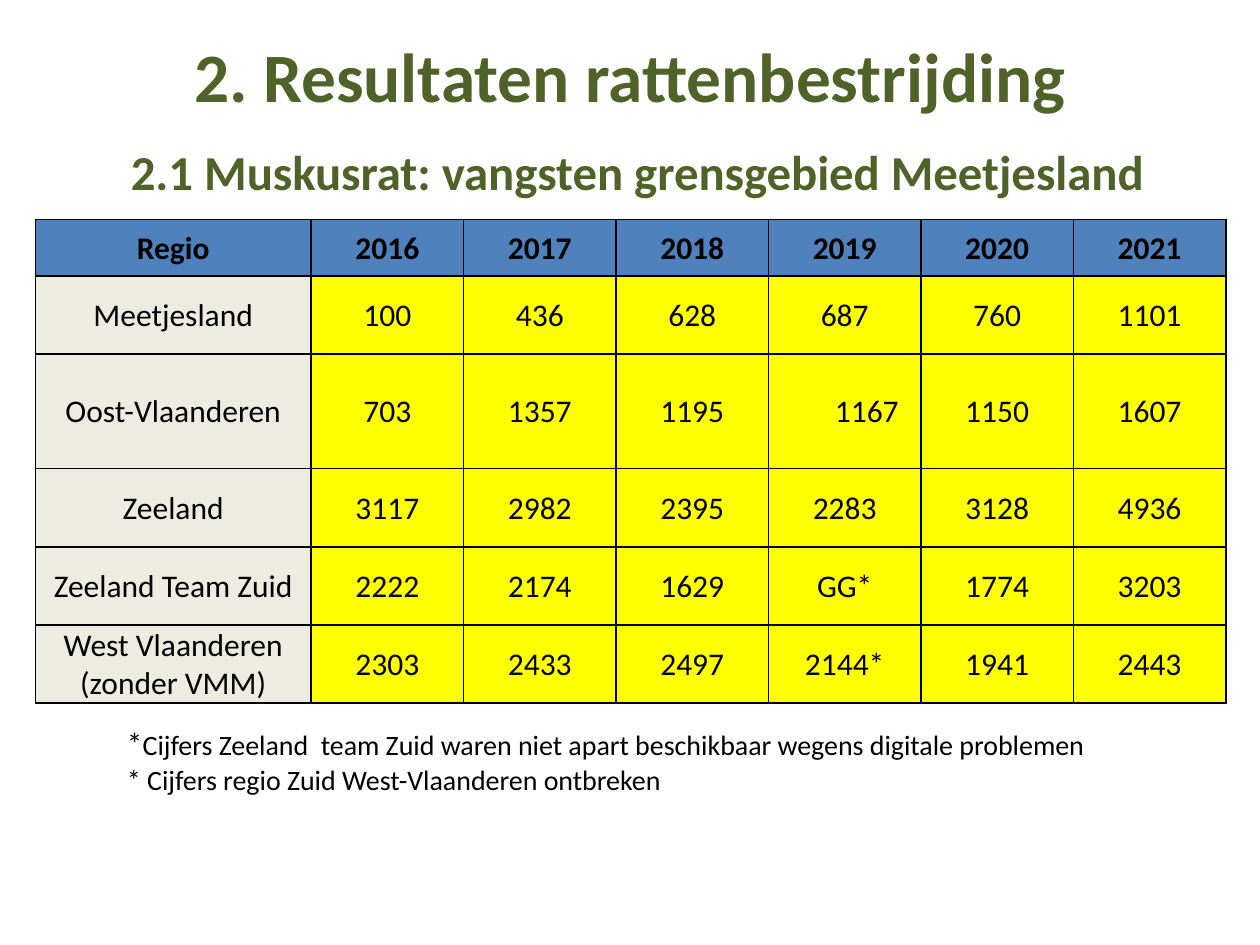
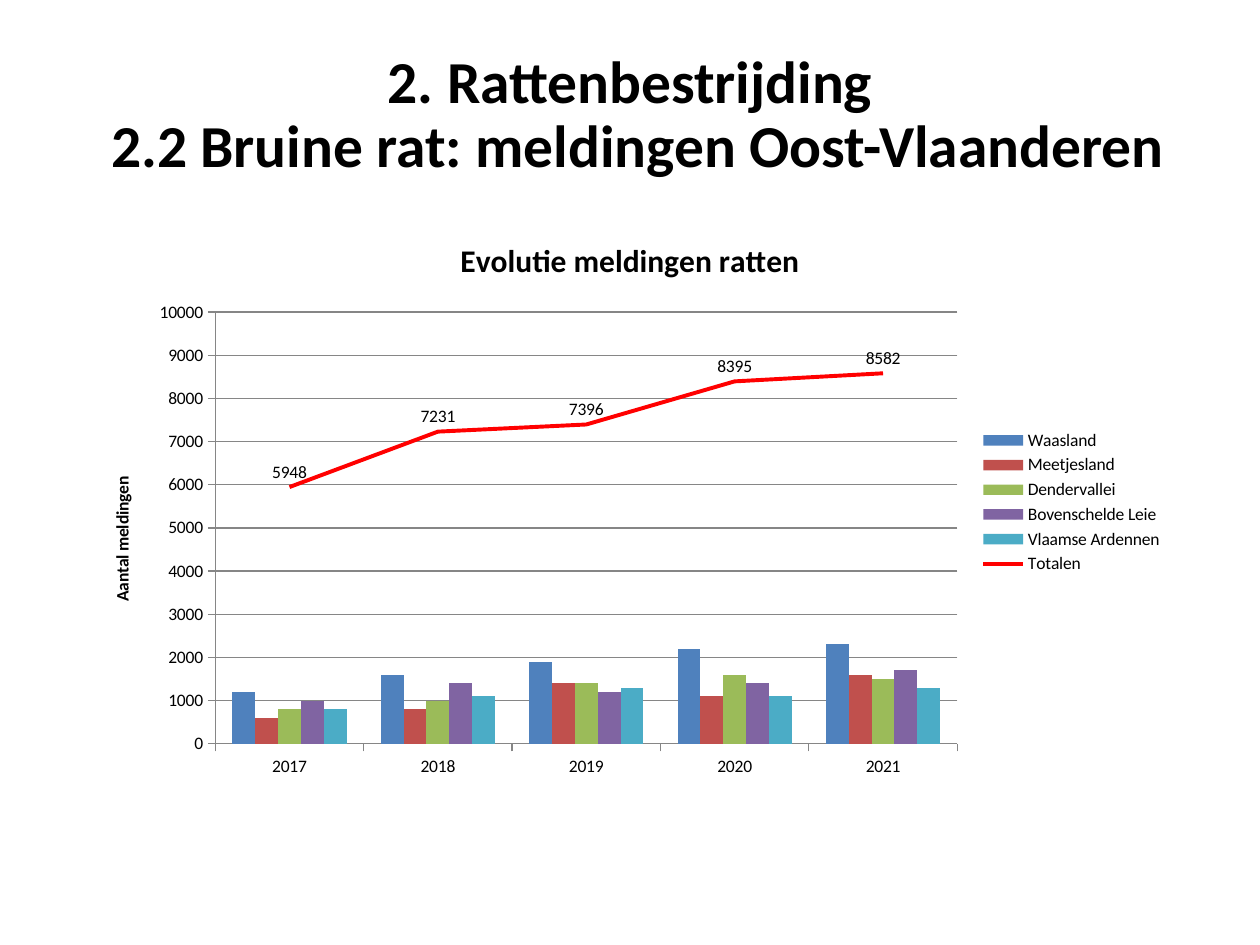
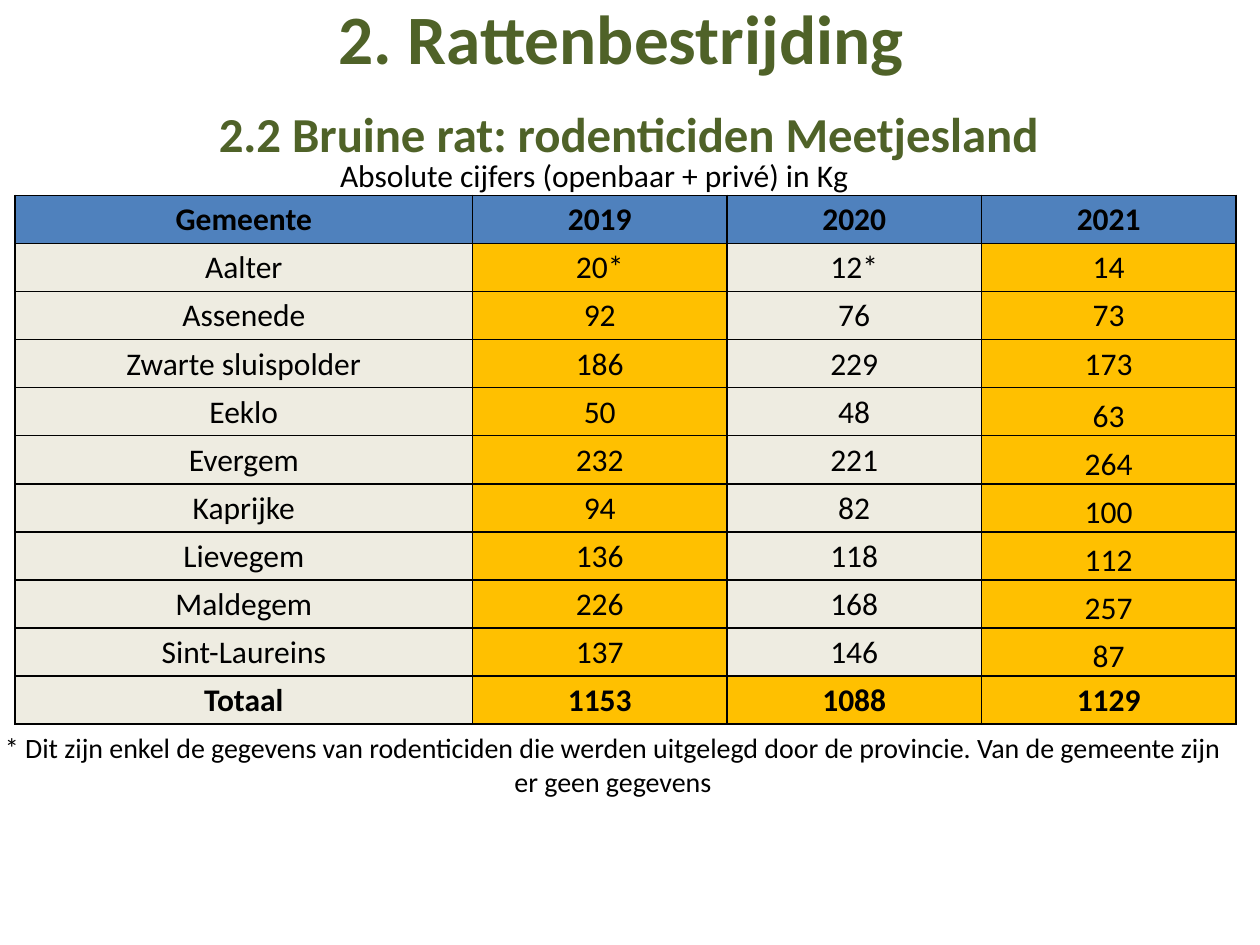
from lxml import etree
from pptx import Presentation
from pptx.chart.data import CategoryChartData
from pptx.dml.color import RGBColor
from pptx.enum.chart import XL_CHART_TYPE as ChartType
from pptx.enum.chart import XL_LABEL_POSITION as LabelPosition
from pptx.enum.chart import XL_LEGEND_POSITION as LegendPosition
from pptx.enum.chart import XL_MARKER_STYLE as MarkerStyle
from pptx.enum.chart import XL_TICK_MARK as TickMark
from pptx.enum.text import MSO_ANCHOR as Anchor
from pptx.enum.text import PP_ALIGN as Align
from pptx.oxml import parse_xml
from pptx.oxml.ns import nsdecls, qn
from pptx.util import Inches, Pt

FONT = "Calibri"
COLORS = {
    "text": "000000",
    "title": "4F6228",
    "header": "4F81BD",
    "label": "EEECE1",
    "catch": "FFFF00",
    "dose": "FFC000",
    "grid": "868686",
    "total": "FF0000",
}
SERIES_COLORS = ["4F81BD", "C0504D", "9BBB59", "8064A2", "4BACC6"]

# The page is a grid of 100 columns by 100 rows
COLUMN = Inches(10) // 100
ROW = Inches(7.5) // 100
TITLE_SIZE = (90, 16.67)
SUBTITLE_SHIFT = 1.2


def rgb(name):
    return RGBColor.from_string(COLORS.get(name, name))


def place(left, top, width, height):
    return [int(left * COLUMN), int(top * ROW), int(width * COLUMN), int(height * ROW)]


def style_font(font, size, color="text", bold=False):
    font.name = FONT
    font.size = Pt(size)
    font.bold = bold
    font.color.rgb = rgb(color)


def add_span(para, text, size, color="text", bold=False):
    span = para.add_run()
    span.text = text
    style_font(span.font, size, color, bold)


def indent(para, columns):
    para._p.get_or_add_pPr().set("marL", str(int(columns * COLUMN)))


def add_text(page, area, paragraphs, align=Align.LEFT, anchor=Anchor.TOP):
    """Each paragraph is a list of (text, size, color, bold) spans."""
    box = page.shapes.add_textbox(*place(*area))
    frame = box.text_frame
    frame.word_wrap = True
    frame.vertical_anchor = anchor
    for number, spans in enumerate(paragraphs):
        para = frame.add_paragraph() if number else frame.paragraphs[0]
        para.alignment = align
        for span in spans:
            add_span(para, *span)
    return frame.paragraphs


def add_title(page, left, top, title, subtitle, sizes=(39.6, 27.9), color="title"):
    lines = [[(text, size, color, True)] for text, size in zip((title, subtitle), sizes)]
    first, second = add_text(page, (left, top, *TITLE_SIZE), lines, Align.CENTER, Anchor.MIDDLE)
    indent(second, SUBTITLE_SHIFT)
    return first, second


# Tables
def add_borders(cell):
    props = cell._tc.get_or_add_tcPr()
    for position, side in enumerate(("lnL", "lnR", "lnT", "lnB")):
        props.insert(position, parse_xml(
            f'<a:{side} {nsdecls("a")} w="12700"><a:solidFill>'
            f'<a:srgbClr val="{COLORS["text"]}"/></a:solidFill></a:{side}>'))


def fill_cell(cell, text, fill, bold):
    cell.fill.solid()
    cell.fill.fore_color.rgb = rgb(fill)
    cell.vertical_anchor = Anchor.MIDDLE
    cell.margin_left = cell.margin_right = cell.margin_top = Inches(0.01)
    cell.margin_bottom = 0
    para = cell.text_frame.paragraphs[0]
    para.alignment = Align.CENTER
    add_span(para, text, 18, bold=bold)
    add_borders(cell)


def add_grid(page, left, top, widths, heights, rows, fill_for, bold_rows):
    area = place(left, top, sum(widths), sum(heights))
    table = page.shapes.add_table(len(rows), len(widths), *area).table
    for column, width in zip(table.columns, widths):
        column.width = int(width * COLUMN)
    for line, height in zip(table.rows, heights):
        line.height = int(height * ROW)
    for r, values in enumerate(rows):
        for c, text in enumerate(values):
            fill_cell(table.cell(r, c), text, fill_for(r, c), r in bold_rows)
    return table


# Chart
def move_last_series_to_line(chart):
    bars = chart._chartSpace.find(".//" + qn("c:barChart"))
    series = bars.findall(qn("c:ser"))[-1]
    for bar_setting in series.findall(qn("c:invertIfNegative")):
        series.remove(bar_setting)
    lines = parse_xml(f'<c:lineChart {nsdecls("c")}><c:grouping val="standard"/>'
                      '<c:varyColors val="0"/><c:marker val="1"/></c:lineChart>')
    lines.insert(2, series)
    for axis in bars.findall(qn("c:axId")):
        etree.SubElement(lines, qn("c:axId")).set("val", axis.get("val"))
    bars.addnext(lines)


def set_plot_area(chart, **shares):
    area = chart._chartSpace.find(".//" + qn("c:plotArea"))
    for old in area.findall(qn("c:layout")):
        area.remove(old)
    sizes = "".join(f'<c:{key} val="{share}"/>' for key, share in shares.items())
    area.insert(0, parse_xml(
        f'<c:layout {nsdecls("c")}><c:manualLayout><c:layoutTarget val="inner"/>'
        f'<c:xMode val="edge"/><c:yMode val="edge"/>{sizes}</c:manualLayout></c:layout>'))


def title_part(part, text, size):
    part.has_text_frame = True
    add_span(part.text_frame.paragraphs[0], text, size, bold=True)


def add_reports_chart(page, area, title, axis_title, years, reports):
    data = CategoryChartData()
    data.categories = years
    for name, values in reports.items():
        data.add_series(name, values)
    chart = page.shapes.add_chart(ChartType.COLUMN_CLUSTERED, *place(*area), data).chart
    style_font(chart.font, 10)
    move_last_series_to_line(chart)
    set_plot_area(chart, x=0.12, y=0.17, w=0.68, h=0.75)

    chart.has_title = True
    title_part(chart.chart_title, title, 18)
    chart.has_legend = True
    chart.legend.position = LegendPosition.RIGHT
    chart.legend.include_in_layout = False

    bars, lines = chart.plots
    bars.gap_width = 150
    bars.overlap = 0
    bars.vary_by_categories = False
    for series, color in zip(bars.series, SERIES_COLORS):
        series.format.fill.solid()
        series.format.fill.fore_color.rgb = rgb(color)

    total = lines.series[0]
    total.smooth = False
    total.marker.style = MarkerStyle.NONE
    total.format.line.color.rgb = rgb("total")
    total.format.line.width = Pt(2.25)
    labels = total.data_labels
    labels.show_value = True
    labels.position = LabelPosition.ABOVE
    style_font(labels.font, 10)

    amounts = chart.value_axis
    amounts.minimum_scale, amounts.maximum_scale, amounts.major_unit = 0, 10000, 1000
    amounts.has_major_gridlines = True
    title_part(amounts.axis_title, axis_title, 10)
    for axis in (amounts, chart.category_axis):
        axis.major_tick_mark = TickMark.OUTSIDE
        axis.format.line.color.rgb = rgb("grid")
    amounts.major_gridlines.format.line.color.rgb = rgb("grid")


# Slides
def build_muskrat(page):
    add_title(page, 5, 4, "2. Resultaten rattenbestrijding",
              "2.1 Muskusrat: vangsten grensgebied Meetjesland")[1].space_before = Pt(14.3)
    add_text(page, (9.1, 76, 89, 8.93), [
        [("*", 18),
         ("Cijfers Zeeland  team Zuid waren niet apart beschikbaar wegens digitale problemen", 16)],
        [("* Cijfers regio Zuid West-Vlaanderen ontbreken", 16)],
    ])
    rows = [
        ["Regio", "2016", "2017", "2018", "2019", "2020", "2021"],
        ["Meetjesland", "100", "436", "628", "687", "760", "1101"],
        ["Oost-Vlaanderen", "703", "1357", "1195", "1167", "1150", "1607"],
        ["Zeeland", "3117", "2982", "2395", "2283", "3128", "4936"],
        ["Zeeland Team Zuid", "2222", "2174", "1629", "GG*", "1774", "3203"],
        ["West Vlaanderen (zonder VMM)", "2303", "2433", "2497", "2144*", "1941", "2443"],
    ]

    def fill_for(row, column):
        if row == 0:
            return "header"
        return "catch" if column else "label"

    table = add_grid(page, 2.8, 23.2, [21.9] + [12.1] * 6,
                     [6, 8.27, 12.13] + [8.27] * 3, rows, fill_for, {0})
    table.cell(2, 4).margin_left = Inches(0.36)


def build_reports(page):
    for para in add_title(page, 5, 4, "2. Rattenbestrijding",
                          "2.2 Bruine rat: meldingen Oost-Vlaanderen", (34, 34), "text"):
        para.line_spacing = 0.9
    add_reports_chart(
        page, (6.7, 22.67, 86.6, 60.93), "Evolutie meldingen ratten", "Aantal meldingen",
        ["2017", "2018", "2019", "2020", "2021"],
        {
            "Waasland": [1200, 1600, 1900, 2200, 2300],
            "Meetjesland": [600, 800, 1400, 1100, 1600],
            "Dendervallei": [800, 1000, 1400, 1600, 1500],
            "Bovenschelde Leie": [1000, 1400, 1200, 1400, 1700],
            "Vlaamse Ardennen": [800, 1100, 1300, 1100, 1300],
            "Totalen": [5948, 7231, 7396, 8395, 8582],
        })


def build_rodenticides(page):
    add_title(page, 4.3, 0, "2. Rattenbestrijding",
              "2.2 Bruine rat: rodenticiden Meetjesland")[1].space_before = Pt(14.3)
    add_text(page, (-0.7, 76.67, 98.7, 8.53), [[(
        "* Dit zijn enkel de gegevens van rodenticiden die werden uitgelegd door de provincie. "
        "Van de gemeente zijn er geen gegevens", 16)]], Align.CENTER)
    caption = add_text(page, (11.4, 15.87, 81.1, 9.47),
                       [[("Absolute cijfers (openbaar + privé) in Kg", 18)]])
    indent(caption[0], 14.6)
    rows = [
        ["Gemeente", "2019", "2020", "2021"],
        ["Aalter", "20*", "12*", "14"],
        ["Assenede", "92", "76", "73"],
        ["Zwarte sluispolder", "186", "229", "173"],
        ["Eeklo", "50", "48", "63"],
        ["Evergem", "232", "221", "264"],
        ["Kaprijke", "94", "82", "100"],
        ["Lievegem", "136", "118", "112"],
        ["Maldegem", "226", "168", "257"],
        ["Sint-Laureins", "137", "146", "87"],
        ["Totaal", "1153", "1088", "1129"],
    ]
    last = len(rows) - 1

    def fill_for(row, column):
        if row == 0:
            return "header"
        if column in (1, 3) or (row, column) == (last, 2):
            return "dose"
        return "label"

    table = add_grid(page, 1.2, 20.67, [36.3] + [20.2] * 3,
                     [56 / len(rows)] * len(rows), rows, fill_for, {0, last})
    for row in range(4, last):
        table.cell(row, 3).vertical_anchor = Anchor.BOTTOM


def main():
    deck = Presentation()
    deck.slide_width = 100 * COLUMN
    deck.slide_height = 100 * ROW
    blank = deck.slide_layouts[6]
    for build in (build_muskrat, build_reports, build_rodenticides):
        build(deck.slides.add_slide(blank))
    deck.save("out.pptx")


if __name__ == "__main__":
    main()
